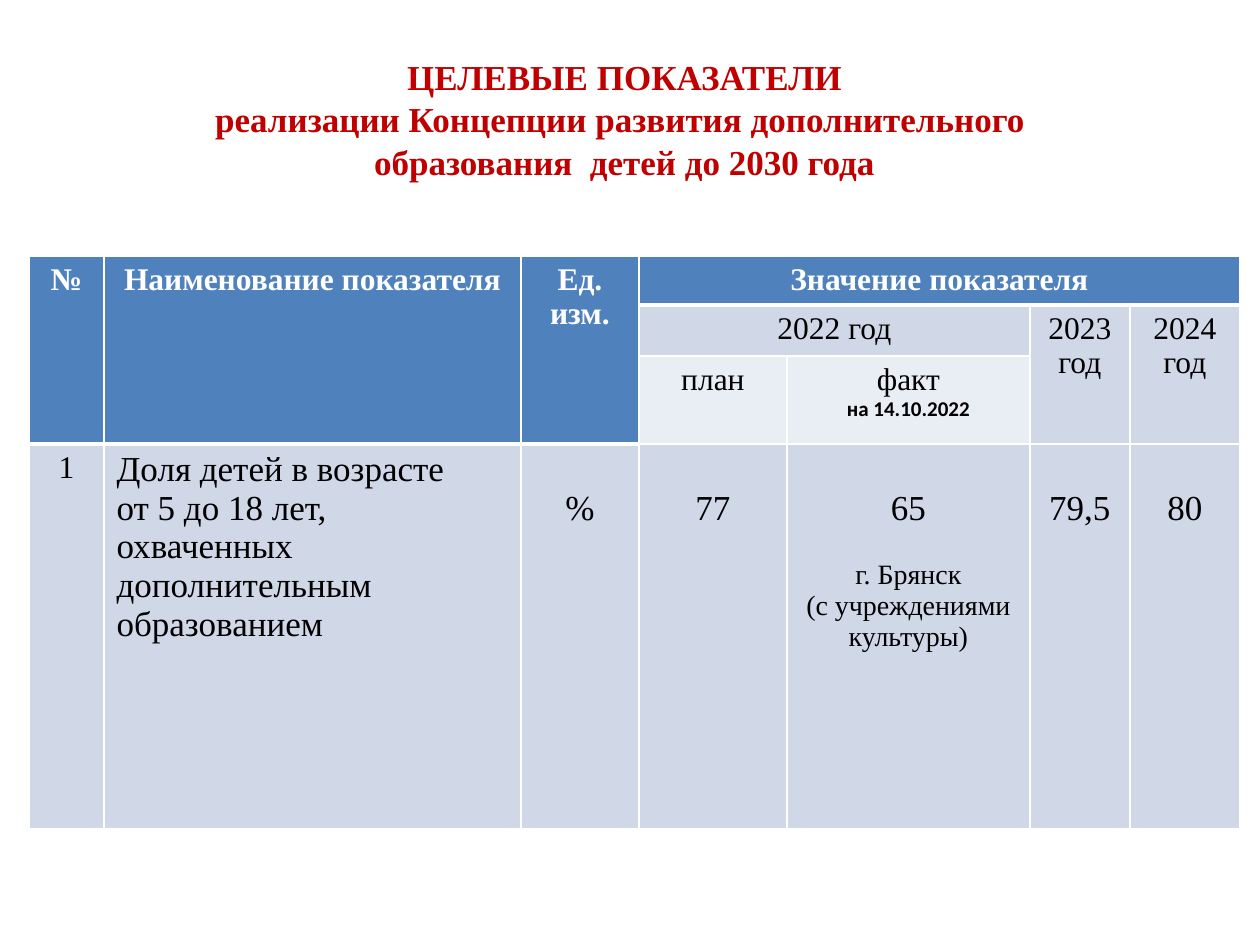
from lxml.etree import SubElement
from pptx import Presentation
from pptx.dml.color import RGBColor
from pptx.enum.text import MSO_ANCHOR, MSO_AUTO_SIZE, PP_ALIGN
from pptx.oxml.ns import qn
from pptx.util import Pt

PX = 914400 // 126
RED = RGBColor(0xC0, 0x00, 0x00)
WHITE = RGBColor(0xFF, 0xFF, 0xFF)
BLACK = RGBColor(0x00, 0x00, 0x00)
BLUE = RGBColor(0x4F, 0x81, 0xBD)
BAND = RGBColor(0xD0, 0xD8, 0xE8)
PALE = RGBColor(0xE9, 0xED, 0xF4)
SERIF, SANS = "Times New Roman", "Calibri"


class SlideBuilder:
    """Holds the style and the current slide."""

    def __init__(self, deck):
        self.page = deck.slides.add_slide(deck.slide_layouts[5])

    def add_lines(self, frame, lines, color, align=PP_ALIGN.CENTER):
        """Each line is (text, size, bold, font, points before it)."""
        for index, (text, size, bold, font, before) in enumerate(lines):
            para = frame.paragraphs[0] if index == 0 else frame.add_paragraph()
            para.alignment = align
            para.space_before = Pt(before)
            span = para.add_run()
            span.text = text
            span.font.size = Pt(size)
            span.font.bold = bold
            span.font.name = font
            span.font.color.rgb = color

    def title(self, left, top, width, height, lines):
        box = self.page.shapes.title
        box.left, box.top = left * PX, top * PX
        box.width, box.height = width * PX, height * PX
        frame = box.text_frame
        frame.word_wrap = True
        frame.auto_size = MSO_AUTO_SIZE.NONE
        frame.vertical_anchor = MSO_ANCHOR.MIDDLE
        self.add_lines(frame, lines, RED)

    def table(self, left, top, widths, heights):
        grid = self.page.shapes.add_table(
            len(heights), len(widths), left * PX, top * PX,
            sum(widths) * PX, sum(heights) * PX).table
        for column, width in zip(grid.columns, widths):
            column.width = width * PX
        for row, height in zip(grid.rows, heights):
            row.height = height * PX
        return grid

    def borders(self, cell, sides):
        """Sides maps a border tag to its width in points."""
        properties = cell._tc.get_or_add_tcPr()
        for index, (tag, width) in enumerate(sides.items()):
            line = SubElement(properties, qn(f"a:{tag}"), w=str(Pt(width)))
            fill = SubElement(line, qn("a:solidFill"))
            SubElement(fill, qn("a:srgbClr"), val=str(WHITE))
            properties.insert(index, line)

    def cell(self, grid, row, column, lines, fill, rows=1, columns=1,
             align=PP_ALIGN.CENTER, drop=0):
        """Fill one cell, merged over rows and columns; drop lowers its text."""
        origin = grid.cell(row, column)
        if rows * columns > 1:
            origin.merge(grid.cell(row + rows - 1, column + columns - 1))
        sides = {"lnL": 1, "lnR": 1}
        if row == 0:
            sides["lnT"] = 1
        sides["lnB"] = 3 if fill == BLUE else 1
        for r in range(row, row + rows):
            for c in range(column, column + columns):
                part = grid.cell(r, c)
                part.fill.solid()
                part.fill.fore_color.rgb = fill
                self.borders(part, sides)
        origin.margin_top = (6 + drop) * PX
        self.add_lines(origin.text_frame, lines, WHITE if fill == BLUE else BLACK, align)


def line(text, size=18, bold=False, font=SERIF, before=0):
    return text, size, bold, font, before


def main():
    deck = Presentation()
    deck.slide_width, deck.slide_height = 1260 * PX, 945 * PX
    slide = SlideBuilder(deck)

    # Title
    slide.title(29, 49, 1191, 140, [line(text, 20, True) for text in (
        "ЦЕЛЕВЫЕ ПОКАЗАТЕЛИ",
        "реализации Концепции развития дополнительного ",
        "образования  детей до 2030 года")])

    grid = slide.table(29, 256, [75, 417, 118, 148, 243, 100, 110], [49, 51, 88, 385])

    # Header
    for column, text in enumerate(("№", "Наименование показателя", "Ед. изм.")):
        slide.cell(grid, 0, column, [line(text, bold=True)], BLUE, rows=3)
    slide.cell(grid, 0, 3, [line("Значение показателя", bold=True)], BLUE, columns=4)

    # Years, plan and fact
    slide.cell(grid, 1, 3, [line("2022 год")], BAND, columns=2)
    for column, text in ((5, "2023 год"), (6, "2024 год")):
        slide.cell(grid, 1, column, [line(text)], BAND, rows=2)
    slide.cell(grid, 2, 3, [line("план")], PALE)
    slide.cell(grid, 2, 4, [line("факт"), line("на 14.10.2022", 12, True, SANS)], PALE)

    # Indicator and its values
    slide.cell(grid, 3, 0, [line("1")], BAND)
    slide.cell(grid, 3, 1, [
        line("Доля детей в возрасте", 20),
        line("от 5 до 18 лет, охваченных дополнительным образованием", 20),
    ], BAND, align=PP_ALIGN.LEFT)
    city = [line("г. Брянск", 16, before=18), line("(с учреждениями культуры)", 16)]
    for column, text in enumerate(("%", "77", "65", "79,5", "80"), start=2):
        lines = [line(text, 20)] + (city if text == "65" else [])
        slide.cell(grid, 3, column, lines, BAND, drop=39)

    deck.save("out.pptx")


if __name__ == "__main__":
    main()
